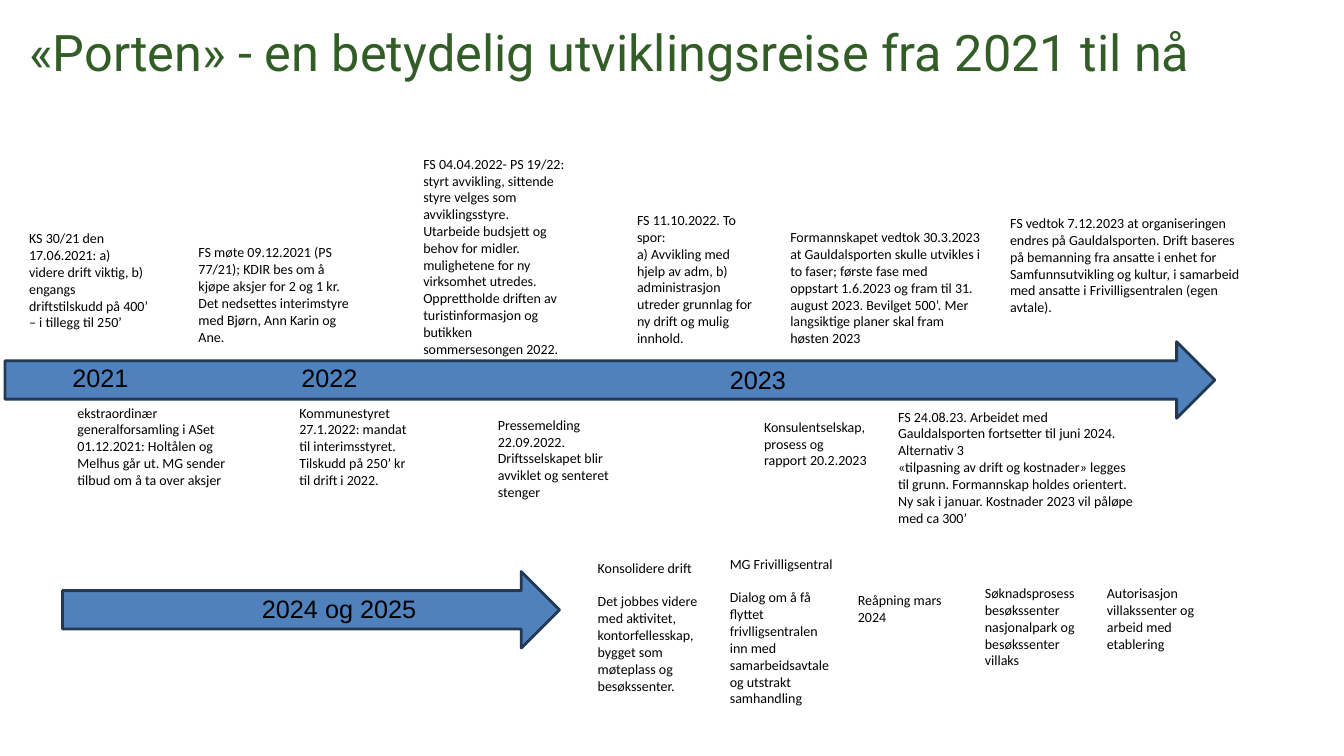
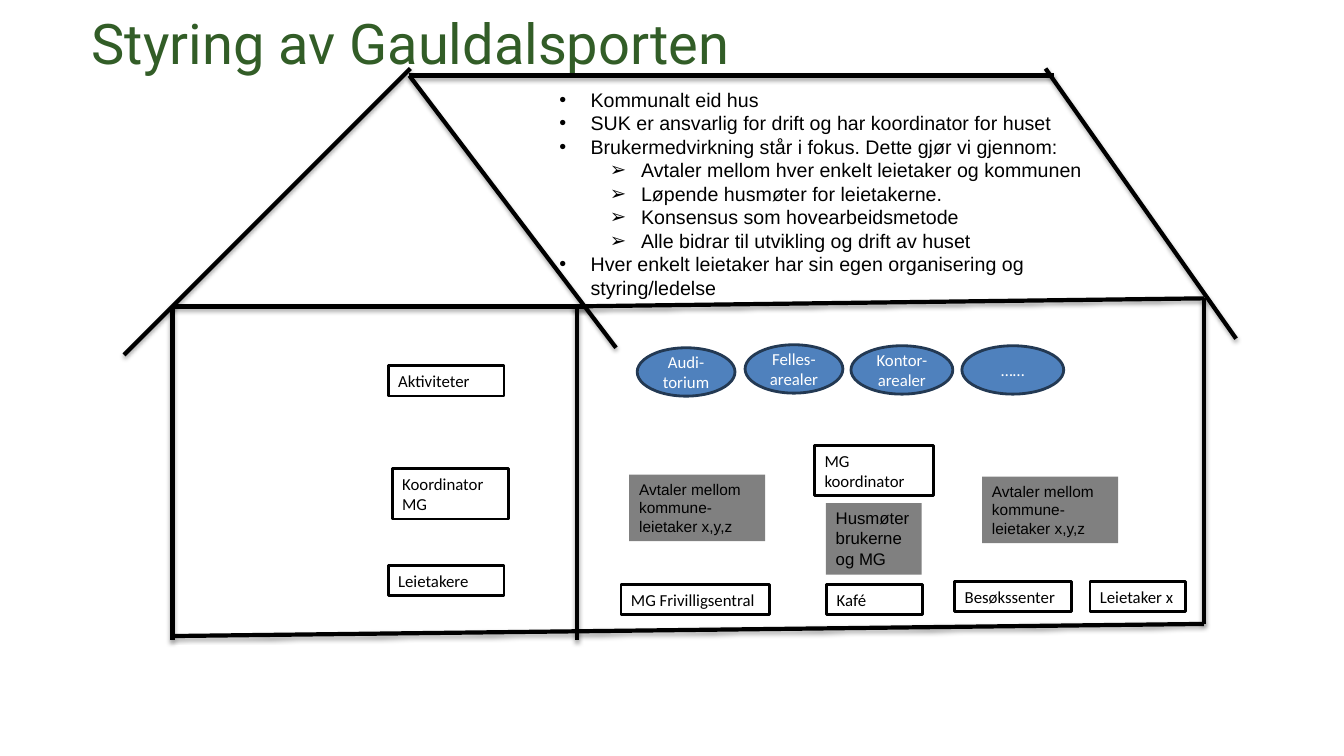
from lxml.etree import SubElement
from pptx import Presentation
from pptx.dml.color import RGBColor
from pptx.enum.shapes import MSO_CONNECTOR, MSO_SHAPE
from pptx.enum.text import MSO_ANCHOR, MSO_AUTO_SIZE, PP_ALIGN
from pptx.oxml.ns import qn
from pptx.util import Inches, Pt

GREEN = RGBColor(0x32, 0x5D, 0x27)
BLUE = RGBColor(0x4F, 0x81, 0xBD)
NAVY = RGBColor(0x23, 0x39, 0x53)
GREY = RGBColor(0x80, 0x80, 0x80)
BLACK = RGBColor(0, 0, 0)
WHITE = RGBColor(0xFF, 0xFF, 0xFF)

CALIBRI = {"name": "Calibri", "size": Pt(10), "color": BLACK}
CALIBRI_12 = {**CALIBRI, "size": Pt(12)}
ARIAL = {"name": "Arial", "size": Pt(18), "color": BLACK}

ARROW = {"shape": MSO_SHAPE.RIGHT_ARROW, "fill": BLUE, "line": NAVY}
NOTE = {"font": CALIBRI}
WHITE_NOTE = {"shape": MSO_SHAPE.RECTANGLE, "fill": WHITE, "font": CALIBRI}
YEAR = {"font": ARIAL}
ROLE = {"shape": MSO_SHAPE.RECTANGLE, "fill": WHITE, "line": BLACK, "font": CALIBRI_12}
AGREEMENT = {"shape": MSO_SHAPE.RECTANGLE, "fill": GREY, "font": {**ARIAL, "size": Pt(11)}}
MEETING = {**AGREEMENT, "font": {**ARIAL, "size": Pt(12)}}
ROOM = {
    "shape": MSO_SHAPE.OVAL, "fill": BLUE, "line": NAVY,
    "font": {**CALIBRI_12, "color": WHITE},
    "align": PP_ALIGN.CENTER, "anchor": MSO_ANCHOR.MIDDLE, "fit": MSO_AUTO_SIZE.NONE,
}
GOVERNANCE = {"font": {**ARIAL, "size": Pt(14)}}
HEADING_GAP = {"gap": Pt(12), "font": CALIBRI}

JOURNEY_TITLE = ("«Porten» - en betydelig utviklingsreise fra 2021 til nå", (0.19, 0.12, 12.3, 0.77), 36)
JOURNEY = [
    (ARROW, (0.05, 3.39, 12, 0.76), []),
    (NOTE, (0.19, 2.23, 1.38, 1.28), [
        "KS 30/21 den 17.06.2021: a) videre drift viktig, b) engangs driftstilskudd på 400’ – i tillegg til 250’"]),
    (NOTE, (0.67, 3.96, 1.78, 0.94), [
        "ekstraordinær generalforsamling i ASet 01.12.2021: Holtålen og Melhus går ut. "
        "MG sender tilbud om å ta over aksjer"]),
    (NOTE, (1.87, 2.37, 1.71, 1.11), [
        "FS møte 09.12.2021 (PS 77/21); KDIR bes om å kjøpe aksjer for 2 og 1 kr. "
        "Det nedsettes interimstyre med Bjørn, Ann Karin og Ane."]),
    (NOTE, (2.87, 3.96, 1.3, 1.25), [
        "Kommunestyret 27.1.2022: mandat til interimsstyret. Tilskudd på 250’ kr til drift i 2022."]),
    (NOTE, (4.1, 1.49, 1.63, 2.12), [
        "FS 04.04.2022- PS 19/22: styrt avvikling, sittende styre velges som avviklingsstyre. "
        "Utarbeide budsjett og behov for midler. mulighetene for ny virksomhet utredes. "
        "Opprettholde driften av turistinformasjon og butikken",
        "sommersesongen 2022."]),
    (NOTE, (4.84, 4.08, 1.54, 0.94), [
        "Pressemelding 22.09.2022. Driftsselskapet blir avviklet og senteret stenger"]),
    (NOTE, (6.22, 2.05, 1.34, 1.45), [
        "FS 11.10.2022. To spor:",
        "a) Avvikling med hjelp av adm, b) administrasjon utreder grunnlag for ny drift og mulig innhold."]),
    (NOTE, (7.48, 4.1, 1.22, 0.77), ["Konsulentselskap, prosess og rapport 20.2.2023"]),
    (NOTE, (7.74, 2.22, 2.13, 1.28), [
        "Formannskapet vedtok 30.3.2023 at Gauldalsporten skulle utvikles i to faser; første fase med",
        "oppstart 1.6.2023 og fram til 31. august 2023. Bevilget 500’. "
        "Mer langsiktige planer skal fram høsten 2023"]),
    (WHITE_NOTE, (8.81, 4, 2.57, 1.28), [
        "FS 24.08.23. Arbeidet med Gauldalsporten fortsetter til juni 2024. Alternativ 3",
        "«tilpasning av drift og kostnader» legges til grunn. Formannskap holdes orientert. "
        "Ny sak i januar. Kostnader 2023 vil påløpe med ca 300’"]),
    (YEAR, (7.14, 3.57, 1.07, 0.4), ["2023"]),
    (YEAR, (0.62, 3.55, 1.07, 0.4), ["2021"]),
    (YEAR, (2.89, 3.55, 1.07, 0.4), ["2022"]),
    (WHITE_NOTE, (9.92, 2.08, 2.57, 1.11), [
        "FS vedtok 7.12.2023 at organiseringen endres på Gauldalsporten. "
        "Drift baseres på bemanning fra ansatte i enhet for Samfunnsutvikling og kultur, "
        "i samarbeid med ansatte i Frivilligsentralen (egen avtale)."]),
    (HEADING_GAP, (7.14, 5.46, 1.22, 1.78), [
        "MG Frivilligsentral",
        "Dialog om å få flyttet frivlligsentralen inn med samarbeidsavtale og utstrakt samhandling"]),
    (ARROW, (0.62, 5.67, 4.93, 0.76), []),
    (YEAR, (2.5, 5.84, 2.34, 0.4), ["2024 og 2025"]),
    (HEADING_GAP, (5.83, 5.5, 1.22, 1.45), [
        "Konsolidere drift",
        "Det jobbes videre med aktivitet, kontorfellesskap, bygget som møteplass og besøkssenter."]),
    (NOTE, (9.67, 5.75, 1.22, 0.94), ["Søknadsprosess besøkssenter nasjonalpark og besøkssenter villaks"]),
    (NOTE, (8.41, 5.82, 1.22, 0.44), ["Reåpning mars 2024"]),
    (NOTE, (10.88, 5.75, 1.22, 0.77), ["Autorisasjon villakssenter og arbeid med etablering"]),
]

HOUSE_TITLE = ("Styring av Gauldalsporten", (0.81, 0.03, 11.21, 0.77), 40)
AGREEMENT_TEXT = "Avtaler mellom kommune-leietaker x,y,z"
HOUSE = [
    (ROLE, (6.16, 5.8, 1.47, 0.3), ["MG Frivilligsentral"]),
    (ROLE, (9.47, 5.77, 1.16, 0.3), ["Besøkssenter"]),
    (ROLE, (8.2, 5.8, 0.95, 0.3), ["Kafé"]),
    (ROLE, (8.08, 4.42, 1.18, 0.5), ["MG koordinator"]),
    (ROLE, (10.81, 5.77, 0.95, 0.3), ["Leietaker x"]),
    (MEETING, (8.19, 4.99, 0.95, 0.71), ["Husmøter brukerne og MG"]),
    (ROLE, (3.85, 5.61, 1.15, 0.3), ["Leietakere"]),
    (ROLE, (3.89, 4.65, 1.15, 0.5), ["Koordinator", "MG"]),
    (ROLE, (3.85, 3.63, 1.15, 0.3), ["Aktiviteter"]),
    (ROOM, (6.32, 3.45, 0.97, 0.48), ["Audi-torium"]),
    (ROOM, (7.39, 3.42, 0.97, 0.48), ["Felles-arealer"]),
    (ROOM, (8.44, 3.43, 1.01, 0.48), ["Kontor-arealer"]),
    (ROOM, (9.54, 3.43, 1.01, 0.48), ["……"]),
    (AGREEMENT, (9.74, 4.73, 1.35, 0.66), [AGREEMENT_TEXT]),
    (AGREEMENT, (6.24, 4.71, 1.35, 0.66), [AGREEMENT_TEXT]),
    (GOVERNANCE, (5.45, 0.82, 5.8, 2.22), [
        (0, "Kommunalt eid hus"),
        (0, "SUK er ansvarlig for drift og har koordinator for huset"),
        (0, "Brukermedvirkning står i fokus. Dette gjør vi gjennom:"),
        (1, "Avtaler mellom hver enkelt leietaker og kommunen"),
        (1, "Løpende husmøter for leietakerne."),
        (1, "Konsensus som hovearbeidsmetode"),
        (1, "Alle bidrar til utvikling og drift av huset"),
        (0, "Hver enkelt leietaker har sin egen organisering og styring/ledelse"),
    ]),
]
BULLETS = ["•", "➢"]

LEFT_EAVE, RIGHT_EAVE, GABLE = (1.71, 3.04), (11.94, 2.96), (4.06, 0.75)
RIGHT_FOOT = (11.94, 6.19)
HOUSE_LINES = [
    (LEFT_EAVE, (1.71, 6.35)),
    ((4.07, 0.68), (1.23, 3.52)),
    (GABLE, (6.11, 3.45)),
    (LEFT_EAVE, (5.8, 3.04)),
    (GABLE, (10.45, 0.75)),
    ((10.37, 0.68), (12.26, 3.36)),
    (RIGHT_EAVE, RIGHT_FOOT),
    (RIGHT_FOOT, (1.72, 6.31)),
    ((5.72, 3.04), (5.72, 6.35)),
    ((5.68, 3.04), RIGHT_EAVE),
]


def inches(values):
    return [Inches(value) for value in values]


def format_font(font, values):
    for key, value in values.items():
        if key == "color":
            font.color.rgb = value
        else:
            setattr(font, key, value)


def add_titled_slide(deck, title, place, size):
    slide = deck.slides.add_slide(deck.slide_layouts[5])
    heading = slide.shapes.title
    for side, value in zip(("left", "top", "width", "height"), inches(place)):
        setattr(heading, side, value)
    frame = heading.text_frame
    frame.text = title
    frame.auto_size = MSO_AUTO_SIZE.NONE
    frame.vertical_anchor = MSO_ANCHOR.MIDDLE
    frame.paragraphs[0].alignment = PP_ALIGN.LEFT
    format_font(frame.paragraphs[0].font, {"name": "Roboto", "size": Pt(size), "color": GREEN})
    return slide


def add_bullet(paragraph, level):
    paragraph.level = level
    properties = paragraph._p.get_or_add_pPr()
    properties.set("marL", str(Inches(0.31 + 0.5 * level)))
    properties.set("indent", str(Inches(-0.31)))
    SubElement(properties, qn("a:buFont"), typeface="Arial")
    SubElement(properties, qn("a:buChar"), char=BULLETS[level])


def add_box(slide, style, place, texts):
    if "shape" in style:
        box = slide.shapes.add_shape(style["shape"], *inches(place))
        box.shadow.inherit = False
        box.fill.solid()
        box.fill.fore_color.rgb = style["fill"]
        if "line" in style:
            box.line.color.rgb = style["line"]
            box.line.width = Pt(2)
        else:
            box.line.fill.background()
    else:
        box = slide.shapes.add_textbox(*inches(place))
    if not texts:
        return
    frame = box.text_frame
    frame.word_wrap = True
    frame.auto_size = style.get("fit", MSO_AUTO_SIZE.SHAPE_TO_FIT_TEXT)
    frame.vertical_anchor = style.get("anchor", MSO_ANCHOR.TOP)
    for index, text in enumerate(texts):
        paragraph = frame.add_paragraph() if index else frame.paragraphs[0]
        paragraph.alignment = style.get("align", PP_ALIGN.LEFT)
        if index and "gap" in style:
            paragraph.space_before = style["gap"]
        if isinstance(text, tuple):
            level, text = text
            add_bullet(paragraph, level)
        paragraph.text = text
        format_font(paragraph.font, style["font"])


def add_house_line(slide, start, end):
    beam = slide.shapes.add_connector(MSO_CONNECTOR.STRAIGHT, *inches(start + end))
    beam.line.color.rgb = BLACK
    beam.line.width = Pt(3)
    effects = SubElement(beam._element.spPr, qn("a:effectLst"))
    shadow = SubElement(effects, qn("a:outerShdw"), blurRad=str(Pt(3.1)), dist=str(Pt(1.8)),
                        dir="5400000", rotWithShape="0")
    tint = SubElement(shadow, qn("a:srgbClr"), val=str(BLACK))
    SubElement(tint, qn("a:alpha"), val="35000")


def main():
    deck = Presentation()
    deck.slide_width, deck.slide_height = inches((13.33, 7.5))
    for title, boxes, lines in ((JOURNEY_TITLE, JOURNEY, []), (HOUSE_TITLE, HOUSE, HOUSE_LINES)):
        slide = add_titled_slide(deck, *title)
        for box in boxes:
            add_box(slide, *box)
        for line in lines:
            add_house_line(slide, *line)
    deck.save("out.pptx")


if __name__ == "__main__":
    main()
